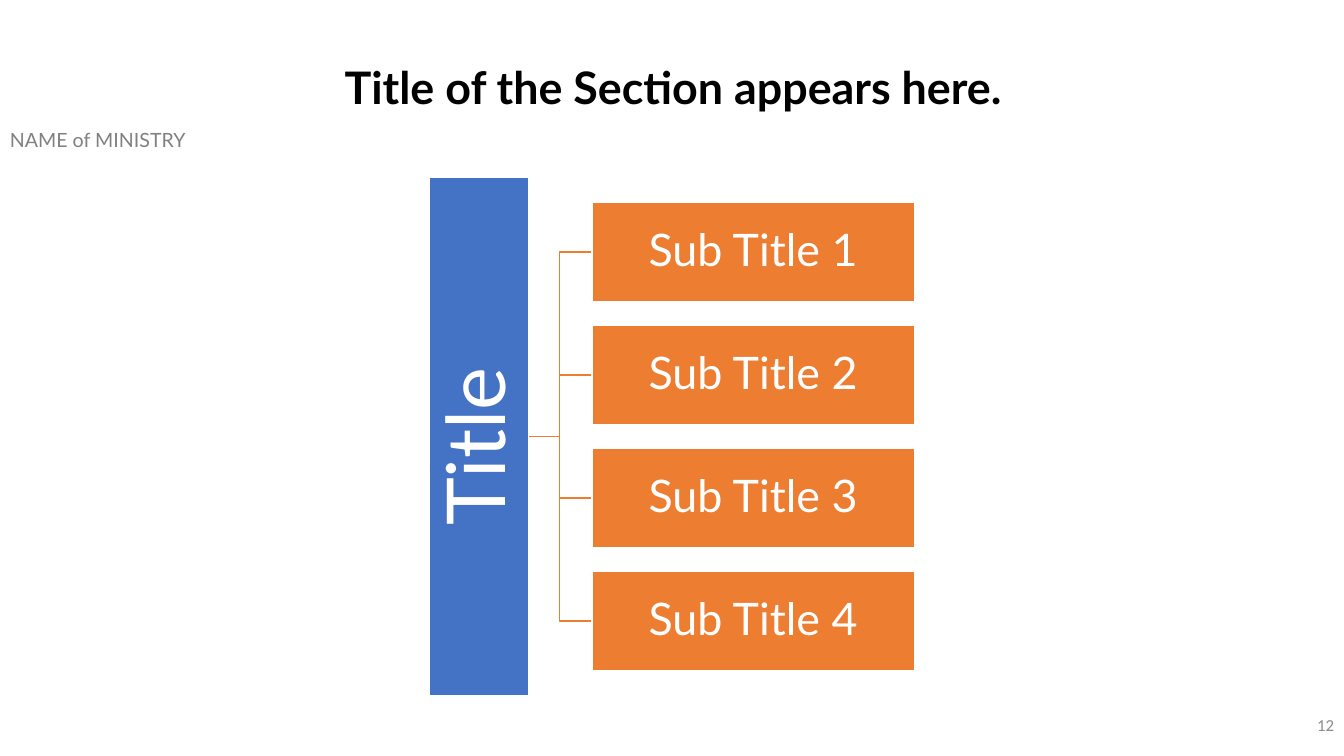
"""Builds a section slide with a title bar branching into four subtitles."""
import dataclasses

import pptx
import pptx.dml.color
import pptx.enum.shapes
import pptx.enum.text
import pptx.util

ALIGN = pptx.enum.text.PP_ALIGN
ANCHOR = pptx.enum.text.MSO_ANCHOR
EMU_PER_PX = 9144


@dataclasses.dataclass(frozen=True)
class Theme:
    font: str = "Lato"
    number_font: str = "Calibri"
    black: str = "000000"
    white: str = "FFFFFF"
    ministry_grey: str = "808080"
    number_grey: str = "8C8C8C"
    blue: str = "4472C4"
    orange: str = "ED7D31"
    bar_size: int = 58
    heading_size: int = 32
    ministry_size: int = 14
    number_size: int = 12
    line_width: int = 1


def px(length):
    return pptx.util.Emu(length * EMU_PER_PX)


def rgb(value):
    return pptx.dml.color.RGBColor.from_string(value)


class SectionSlide:
    def __init__(self, slide, theme):
        self.slide = slide
        self.theme = theme

    def set_text(self, frame, text, size, color, align, font=None, bold=False, spacing=None):
        frame.word_wrap = True
        frame.text = text
        paragraph = frame.paragraphs[0]
        paragraph.alignment = align
        paragraph.line_spacing = spacing
        style = paragraph.runs[0].font
        style.name = font or self.theme.font
        style.size = pptx.util.Pt(size)
        style.bold = bold
        style.color.rgb = rgb(color)

    def label(self, box, text, size, color, align=ALIGN.LEFT, anchor=ANCHOR.TOP, **style):
        frame = self.slide.shapes.add_textbox(*map(px, box)).text_frame
        frame.vertical_anchor = anchor
        self.set_text(frame, text, size, color, align, **style)

    def block(self, box, text, size, fill, inset, rotation=0):
        block = self.slide.shapes.add_shape(
            pptx.enum.shapes.MSO_SHAPE.RECTANGLE, *map(px, box))
        block.rotation = rotation
        block.shadow.inherit = False
        block.fill.solid()
        block.fill.fore_color.rgb = rgb(fill)
        block.line.color.rgb = rgb(self.theme.white)
        block.line.width = pptx.util.Pt(self.theme.line_width)
        frame = block.text_frame
        frame.vertical_anchor = ANCHOR.MIDDLE
        frame.margin_left = frame.margin_right = px(inset)
        frame.margin_top = frame.margin_bottom = px(inset)
        self.set_text(frame, text, size, self.theme.white, ALIGN.CENTER, spacing=0.9)

    def branch(self, start, end):
        (left, top), (right, bottom) = start, end
        middle = (left + right) // 2
        builder = self.slide.shapes.build_freeform(left, top, scale=EMU_PER_PX)
        builder.add_line_segments([(middle, top), (middle, bottom), end], close=False)
        branch = builder.convert_to_shape()
        branch.shadow.inherit = False
        branch.fill.background()
        branch.line.color.rgb = rgb(self.theme.orange)
        branch.line.width = pptx.util.Pt(self.theme.line_width)


def main():
    deck = pptx.Presentation()
    deck.slide_width, deck.slide_height = px(1333), px(750)
    theme = Theme()
    section = SectionSlide(deck.slides.add_slide(deck.slide_layouts[6]), theme)

    section.label((0, 122, 290, 34), "NAME of MINISTRY",
                  theme.ministry_size, theme.ministry_grey)
    section.label((1033, 699, 300, 40), "12", theme.number_size, theme.number_grey,
                  ALIGN.RIGHT, ANCHOR.MIDDLE, font=theme.number_font)

    thickness, bar_length = 98, 514
    bar_center, bar_middle = 475, 433
    bar_right = bar_center + thickness // 2
    subtitle_left, subtitle_width = 587, 320
    first_top, pitch = 201, 122
    subtitles = [(f"Sub Title {i + 1}", first_top + i * pitch) for i in range(4)]

    for _, top in reversed(subtitles):
        section.branch((bar_right, bar_middle), (subtitle_left, top + thickness // 2))

    section.block((bar_center - bar_length // 2, bar_middle - thickness // 2,
                   bar_length, thickness),
                  "Title ", theme.bar_size, theme.blue, inset=4, rotation=270)
    for text, top in subtitles:
        section.block((subtitle_left, top, subtitle_width, thickness),
                      text, theme.heading_size, theme.orange, inset=2)

    section.label((328, 60, 680, 107), "Title of the Section appears here.",
                  theme.heading_size, theme.black, ALIGN.CENTER, bold=True, spacing=0.9)
    deck.save("out.pptx")


if __name__ == "__main__":
    main()
